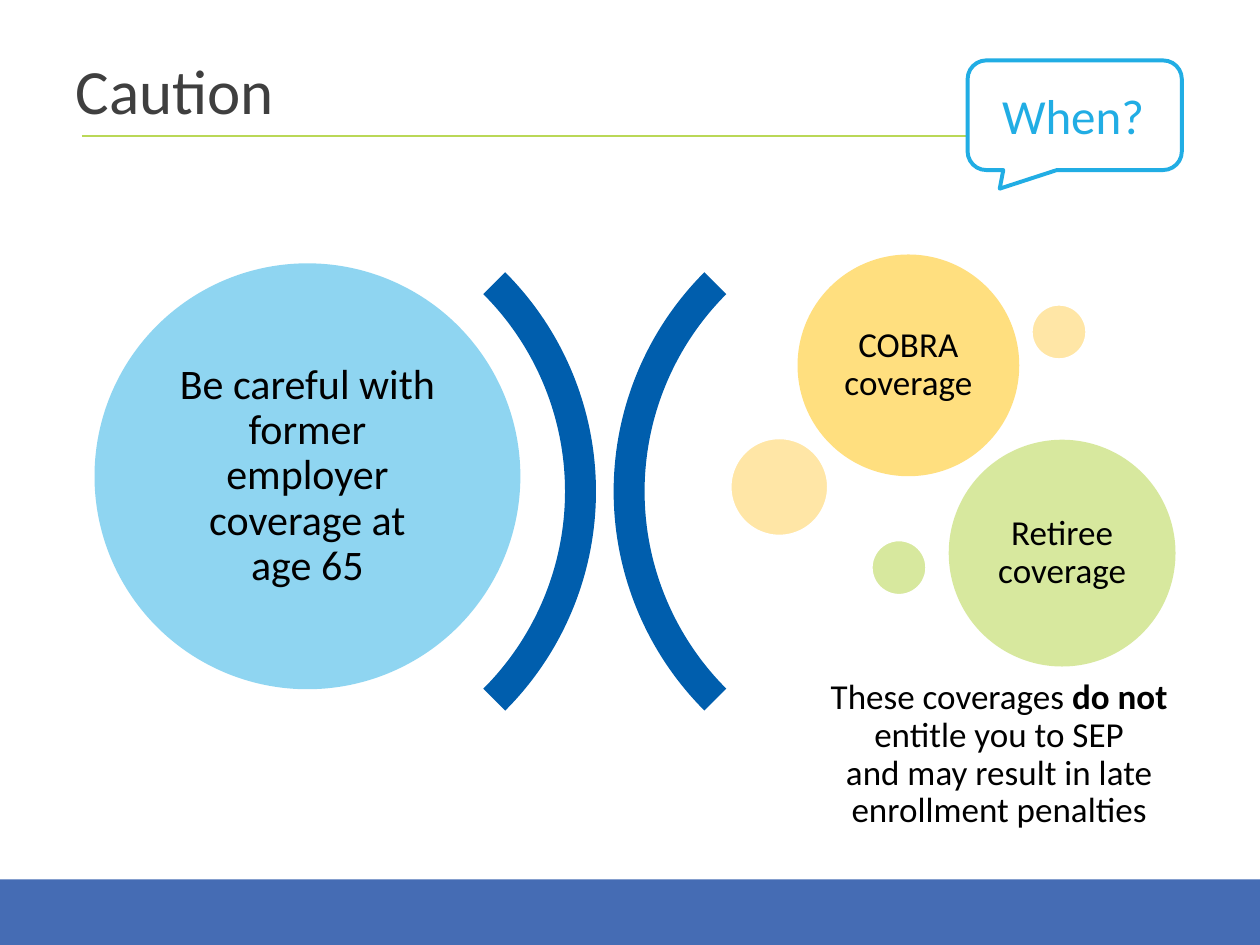
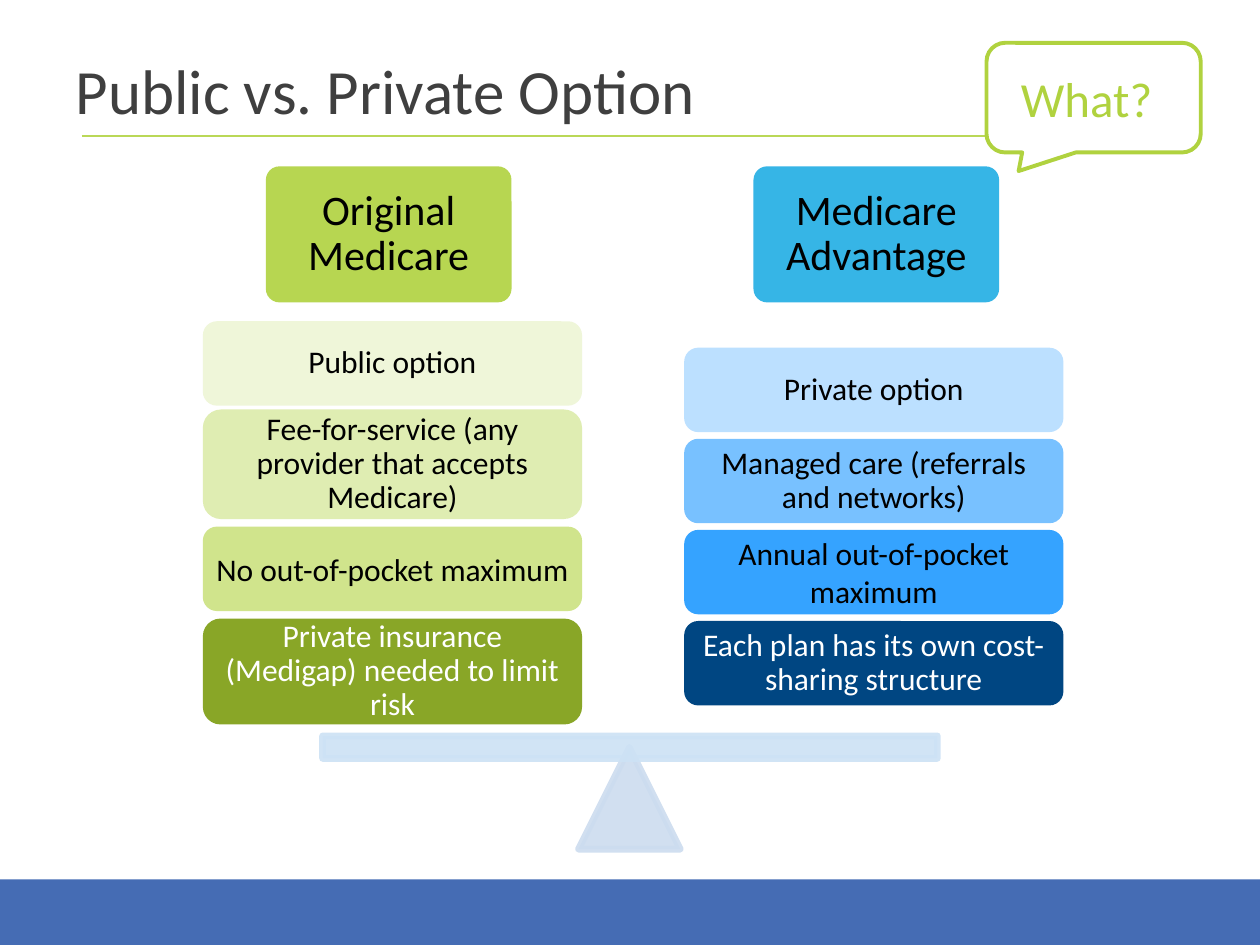
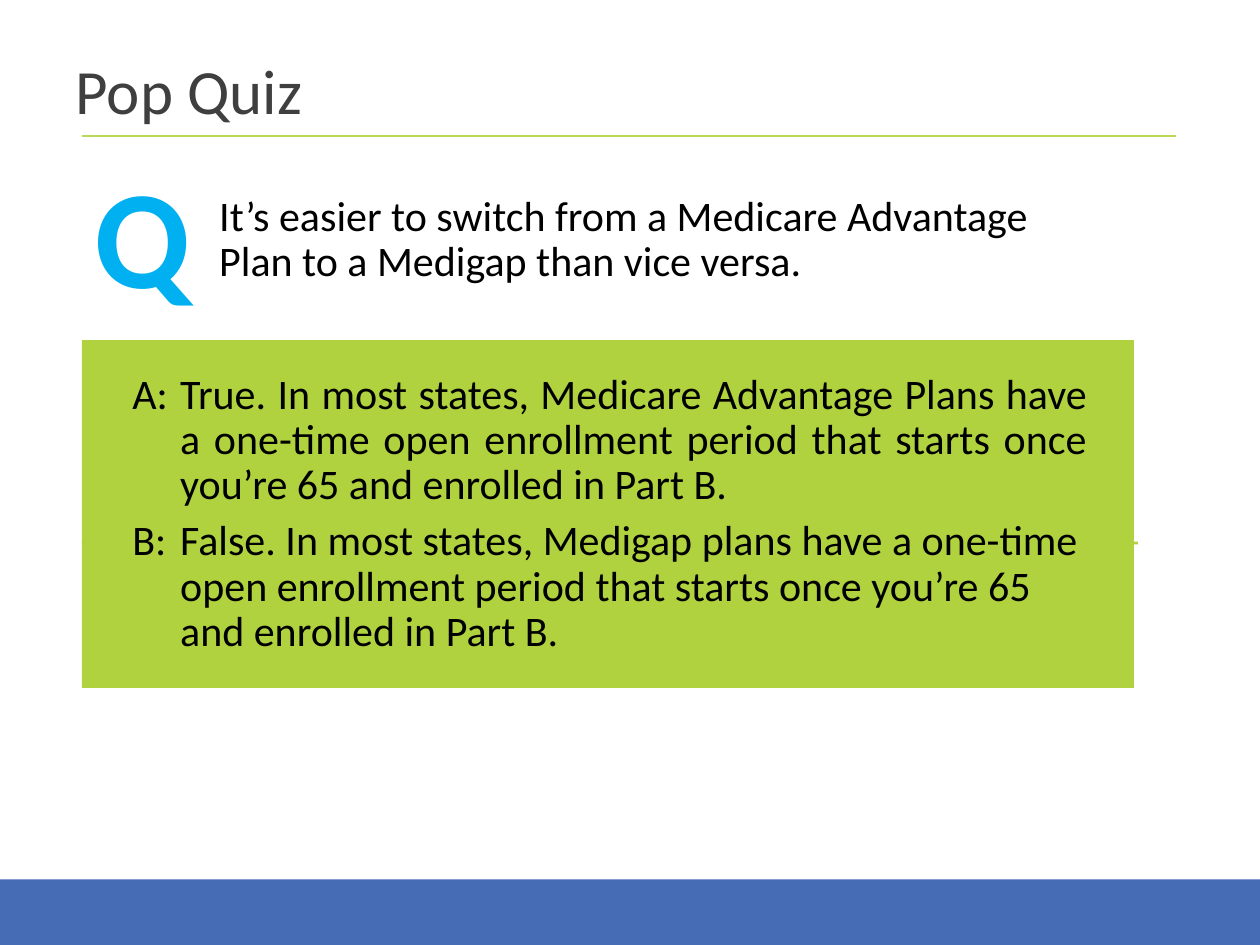
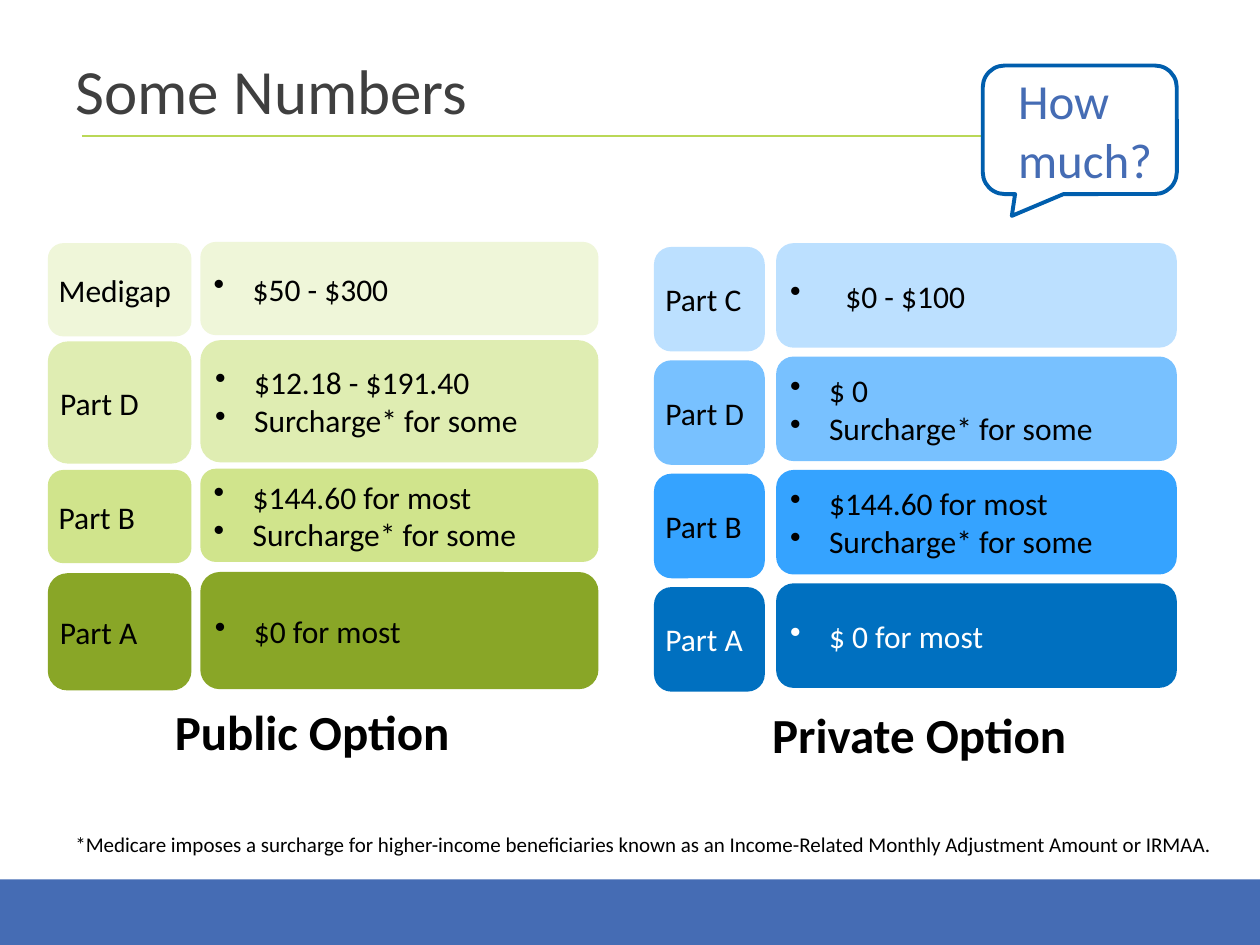
import pptx
import pptx.util
import pptx.dml.color
import pptx.enum.shapes
import pptx.enum.text
import pptx.oxml
import pptx.oxml.ns

MSO = pptx.enum.shapes.MSO_SHAPE
ALIGN = pptx.enum.text.PP_ALIGN
ANCHOR = pptx.enum.text.MSO_ANCHOR
qn = pptx.oxml.ns.qn

COLORS = {
    "white": "FFFFFF", "black": "000000", "title": "3F3F3F", "band": "456CB4",
    "rule": "BAD857", "green": "B0D23F", "sky": "21ADE4", "blue": "005EAD",
    "amber": "FFC000", "sand": "FFCE4E", "cyan": "00B0F0",
    "pivot": "CCDCEF", "beam": "CDE2F5",
    "green1": "EFF6D9", "green2": "DFEDB2", "green3": "D0E48C", "green4": "89A627",
    "blue1": "BCE0FF", "blue2": "78C1FF", "blue3": "35A3FF", "blue4": "0070C0",
    "navy": "004682",
}
COLS, ROWS = 100, 75


class Deck:
    font = "Calibri"

    def __init__(self):
        self.prs = pptx.Presentation()
        self.prs.slide_width = pptx.util.Inches(10)
        self.prs.slide_height = pptx.util.Inches(7.5)
        self.cell = self.prs.slide_width / COLS
        self.s = None

    def grid(self, *cells):
        return [round(c * self.cell) for c in cells]

    def color(self, name):
        return pptx.dml.color.RGBColor.from_string(COLORS[name])

    def slide(self, title, layout=5):
        self.s = self.prs.slides.add_slide(self.prs.slide_layouts[layout])
        self.placeholder(self.s.shapes.title, (5, 2.2, 90, 10.6), title,
                         size=36, color="title", anchor=ANCHOR.MIDDLE)

    def placeholder(self, sp, at, paragraphs, **fmt):
        sp.left, sp.top, sp.width, sp.height = self.grid(*at)
        self.text(sp, paragraphs, **fmt)

    def share(self, sp):
        tree = self.prs.slide_master.shapes.element
        sp.element.xpath(".//p:cNvPr")[0].set("id", str(100 + len(tree)))
        tree.insert(2, sp.element)

    def shape(self, kind, at, fill, line=None, width=0, alpha=None,
              line_alpha=None, adj=(), rotation=0):
        sp = self.s.shapes.add_shape(kind, *self.grid(*at))
        sp.shadow.inherit = False
        sp.rotation = rotation
        for i, value in enumerate(adj):
            sp.adjustments[i] = value
        sp.fill.solid()
        sp.fill.fore_color.rgb = self.color(fill)
        if line:
            sp.line.color.rgb = self.color(line)
            sp.line.width = pptx.util.Pt(width)
        else:
            sp.line.fill.background()
        for share, route in ((alpha, "a:solidFill/a:srgbClr"),
                             (line_alpha, "a:ln/a:solidFill/a:srgbClr")):
            if share:
                clr = sp.element.spPr.xpath(route)[0]
                clr.append(clr.makeelement(qn("a:alpha"), {"val": str(share * 1000)}))
        return sp

    def line(self, x1, y1, x2, y2, color):
        ln = self.s.shapes.add_connector(pptx.enum.shapes.MSO_CONNECTOR.STRAIGHT,
                                         *self.grid(x1, y1, x2, y2))
        ln.line.color.rgb = self.color(color)
        ln.line.width = pptx.util.Pt(1.5)
        sp_pr = ln.element.spPr
        sp_pr.append(sp_pr.makeelement(qn("a:effectLst"), {}))
        return ln

    def box(self, at, paragraphs, **fmt):
        self.text(self.s.shapes.add_textbox(*self.grid(*at)), paragraphs, **fmt)

    def label(self, kind, at, fill, paragraphs, style=None, **fmt):
        self.text(self.shape(kind, at, fill, **(style or {})), paragraphs, **fmt)

    def callout(self, at, words, line, color):
        self.label(MSO.ROUNDED_RECTANGULAR_CALLOUT, at, "white", words,
                   {"line": line, "width": 2.25, "adj": (-0.35, 0.67, 0.17)},
                   size=28, color=color, spacing=1.0, anchor=ANCHOR.MIDDLE,
                   inset=(2.3, 0.5, 0.5, 0.5))

    def text(self, sp, paragraphs, size=18, color="black", bold=False, align=ALIGN.LEFT,
             anchor=ANCHOR.TOP, inset=(1, 0.5, 1, 0.5), spacing=0.9, gap=0,
             hang=0, bullet=None):
        tf = sp.text_frame
        left, top, right, bottom = self.grid(*inset)
        frame = {"word_wrap": True, "auto_size": pptx.enum.text.MSO_AUTO_SIZE.NONE,
                 "vertical_anchor": anchor, "margin_left": left, "margin_top": top,
                 "margin_right": right, "margin_bottom": bottom}
        for key, value in frame.items():
            setattr(tf, key, value)
        if isinstance(paragraphs, str):
            paragraphs = [paragraphs]
        aligns = align if isinstance(align, list) else [align] * len(paragraphs)
        for i, (runs, side) in enumerate(zip(paragraphs, aligns)):
            p = tf.add_paragraph() if i else tf.paragraphs[0]
            self.indent(p, hang, bullet)
            para = {"alignment": side, "line_spacing": spacing,
                    "space_before": pptx.util.Pt(gap if i else 0)}
            for key, value in para.items():
                setattr(p, key, value)
            for run in [(runs, bold)] if isinstance(runs, str) else runs:
                if run == "\n":
                    p.add_line_break()
                    continue
                r = p.add_run()
                r.text, strong = run
                look = {"name": self.font, "size": pptx.util.Pt(size), "bold": strong}
                for key, value in look.items():
                    setattr(r.font, key, value)
                r.font.color.rgb = self.color(color)

    def indent(self, p, hang, bullet):
        p_pr = p._p.get_or_add_pPr()
        width = self.grid(hang)[0]
        p_pr.set("marL", str(width))
        p_pr.set("indent", str(-width))
        mark = ("a:buChar", {"char": bullet}) if bullet else ("a:buNone", {})
        p_pr.append(p_pr.makeelement(qn(mark[0]), mark[1]))


CENTRED = {"align": ALIGN.CENTER, "anchor": ANCHOR.MIDDLE}
SNUG = (0.7,) * 4


def caution(d):
    d.slide("Caution")
    d.share(d.line(6.5, 10.8, 93.3, 10.8, "rule"))
    d.share(d.shape(MSO.RECTANGLE, (0, 69.8, COLS, ROWS - 69.8), "band"))
    for left, rotation in ((-1.9, 90), (48.7, 270)):
        d.shape(MSO.BLOCK_ARC, (left, 14.4, 49.2, 49.2), "blue",
                adj=(135, 189, 0.05), rotation=rotation)
    for left, top, size, fill, words, points, pad in (
            (7.5, 20.9, 33.8, "sky", "Be careful with former employer coverage at age 65", 24, 1.8),
            (63.3, 20.2, 17.6, "amber", "COBRA coverage", 20, 0.8),
            (75.3, 34.9, 18, "green", "Retiree coverage", 20, 0.8)):
        d.label(MSO.OVAL, (left, top, size, size), fill, words, {"alpha": 50},
                size=points, inset=(pad,) * 4, **CENTRED)
    for left, top, size, fill in ((57.8, 34.6, 8.1, "sand"), (81.7, 24, 4.7, "sand"),
                                  (69, 42.7, 4.7, "green")):
        d.shape(MSO.OVAL, (left, top, size, size), fill, "white", 3.78, alpha=50)
    d.box((63.6, 55, 31.4, 9.8),
          [[("These coverages ", False), ("do not ", True), ("entitle you to SEP", False),
            "\n", ("and may result in late enrollment penalties", False)]],
          size=20, inset=(0.8,) * 4, **CENTRED)
    d.callout((76.8, 4.8, 17, 8.7), "When?", "sky", "sky")


def options(d):
    d.slide("Public vs. Private Option")
    for left, fill, words in ((21.1, "green", "Original Medicare"),
                              (59.8, "sky", "Medicare Advantage")):
        d.label(MSO.ROUNDED_RECTANGLE, (left, 13.2, 19.5, 10.8), fill, words,
                {"alpha": 90, "adj": (0.1,)}, size=24, inset=(1,) * 4, **CENTRED)
    for kind, at, fill in ((MSO.ISOSCELES_TRIANGLE, (45.9, 59.3, 8.1, 8.1), "pivot"),
                           (MSO.RECTANGLE, (25.6, 58.4, 48.8, 1.8), "beam")):
        d.shape(kind, at, fill, fill, 3.78, alpha=90, line_alpha=90)
    public = [
        (25.5, 6.7, "green1", "Public option"),
        (32.5, 8.7, "green2", "Fee-for-service (any provider that accepts Medicare)"),
        (41.8, 6.7, "green3", "No out-of-pocket maximum"),
        (49.1, 8.4, "green4", "Private insurance (Medigap) needed to limit risk"),
    ]
    private = [(27.6 + 7.23 * i, 6.7, fill, words) for i, (fill, words) in enumerate((
        ("blue1", "Private option"),
        ("blue2", "Managed care (referrals and networks)"),
        ("blue3", "Annual out-of-pocket maximum"),
        ("navy", "Each plan has its own cost-sharing structure")))]
    for left, stack in ((16.1, public), (54.3, private)):
        for i, (top, height, fill, words) in enumerate(stack):
            d.label(MSO.ROUNDED_RECTANGLE, (left, top, 30.1, height), fill, words,
                    color="white" if i == 3 else "black",
                    spacing=1.0 if i == 2 else 0.9, inset=SNUG, **CENTRED)
    d.callout((78.3, 3.4, 17, 8.7), "What?", "green", "green")


def quiz(d):
    d.slide("Pop Quiz", layout=1)
    d.placeholder(d.s.placeholders[1], (16.8, 14.5, 70.5, 9.9),
                  "It’s easier to switch from a Medicare Advantage Plan to a Medigap than vice versa.",
                  size=24, inset=(0.6, 1, 1, 0.5))
    d.line(6.5, 43, 90.3, 43.1, "green")
    d.label(MSO.RECTANGLE, (6.5, 27, 83.5, 27.6), "green",
            ["A:\tTrue. In most states, Medicare Advantage Plans have a one-time open "
             "enrollment period that starts once you’re 65 and enrolled in Part B.",
             "B:\tFalse. In most states, Medigap plans have a one-time open "
             "enrollment period that starts once you’re 65 and enrolled in Part B."],
            size=24, hang=3.8, gap=6, align=[ALIGN.JUSTIFY, ALIGN.LEFT],
            inset=(4, 2.6, 3.7, 0.5))
    d.box((6.5, 11.3, 10.3, 14.5), "Q", size=80, color="cyan", bold=True, spacing=1.0)


def numbers(d):
    d.slide("Some Numbers")
    for at, words in (((12.9, 55.2, 41, 5.7), "Public Option"),
                      ((60.3, 55.4, 29.2, 5.7), "Private Option")):
        d.box(at, words, size=28, bold=True, spacing=1.0)
    d.box((5, 65.5, 93.8, 3),
          "*Medicare imposes a surcharge for higher-income beneficiaries known as an "
          "Income-Related Monthly Adjustment Amount or IRMAA.", size=12, spacing=1.0)
    d.callout((78, 5.2, 15.4, 10.2), "How much?", "blue", "band")
    surcharge = "Surcharge* for some"
    public = [
        (19.2, 7.4, "green1", "Medigap", ["$50 - $300"]),
        (27, 9.7, "green2", "Part D", ["$12.18 - $191.40", surcharge]),
        (37.2, 7.4, "green3", "Part B", ["$144.60 for most", surcharge]),
        (45.4, 9.3, "green4", "Part A", ["$0 for most"]),
    ]
    private = [(19.3 + 9 * i, 8.3, *row) for i, row in enumerate((
        ("blue1", "Part C", ["$0 - $100"]),
        ("blue2", "Part D", ["$ 0", surcharge]),
        ("blue3", "Part B", ["$144.60 for most", surcharge]),
        ("blue4", "Part A", ["$ 0 for most"])))]
    for stack, name_left, name_width, left, width, drop in (
            (public, 3.8, 11.4, 15.9, 31.6, 0.1),
            (private, 51.9, 8.8, 61.6, 31.8, 0.3)):
        for top, height, fill, part, costs in stack:
            fmt = {"color": "white" if fill == "blue4" else "black",
                   "spacing": 1.0, "anchor": ANCHOR.MIDDLE}
            d.label(MSO.ROUNDED_RECTANGLE, (left, top, width, height), fill, costs,
                    hang=4.4 if part == "Part C" else 3.1, bullet="•", inset=SNUG, **fmt)
            d.label(MSO.ROUNDED_RECTANGLE, (name_left, top + drop, name_width, height),
                    fill, part, inset=(0.5, 0.7, 0.1, 0.7), **fmt)


def main():
    d = Deck()
    for build in (caution, options, quiz, numbers):
        build(d)
    d.prs.save("out.pptx")


if __name__ == "__main__":
    main()
